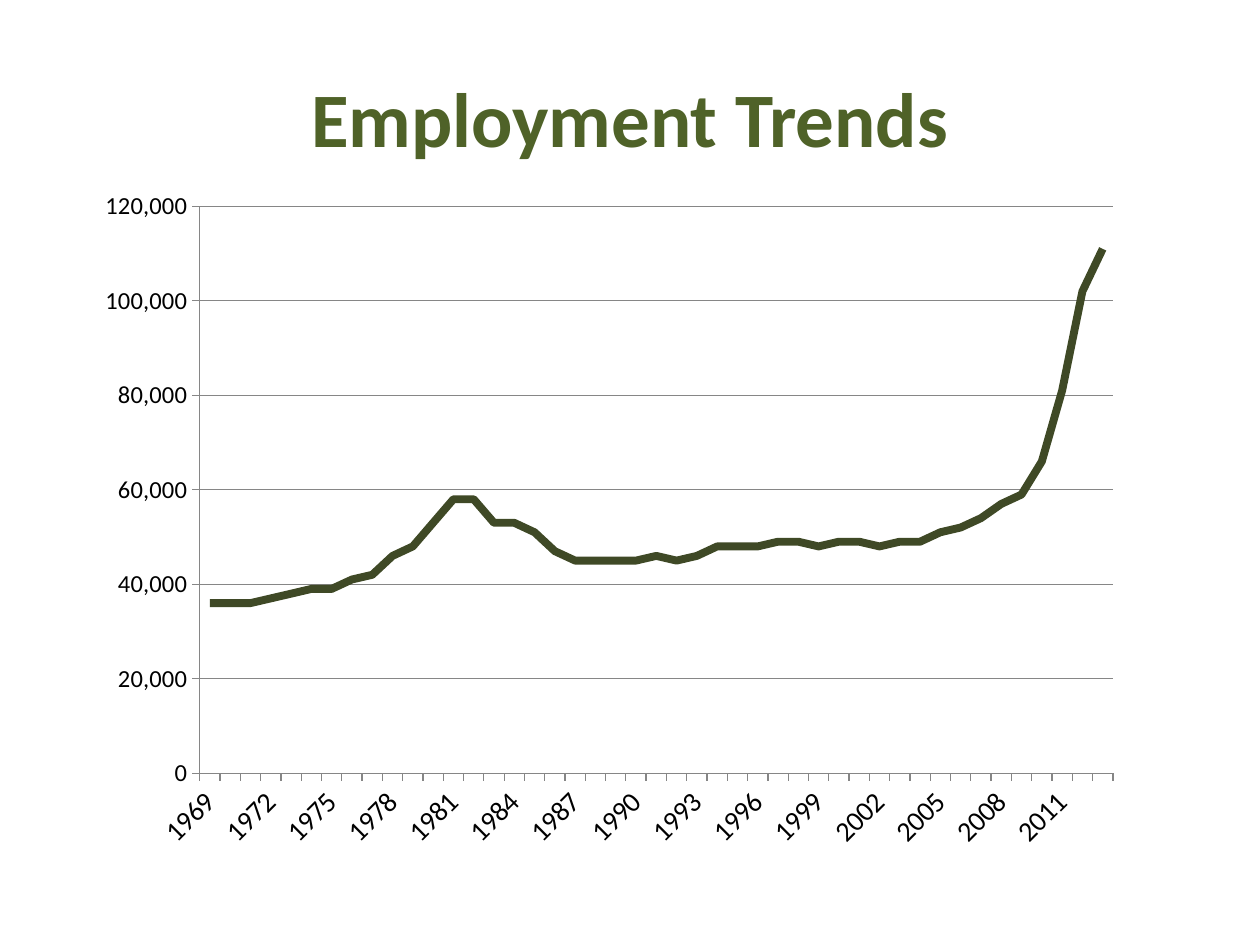
from dataclasses import dataclass

from pptx import Presentation
from pptx.chart.data import CategoryChartData
from pptx.dml.color import RGBColor
from pptx.enum.chart import XL_CHART_TYPE, XL_TICK_MARK
from pptx.enum.text import MSO_ANCHOR, PP_ALIGN
from pptx.oxml import parse_xml
from pptx.oxml.ns import nsdecls
from pptx.util import Cm, Pt

LINE = XL_CHART_TYPE.LINE
OUTSIDE = XL_TICK_MARK.OUTSIDE
MIDDLE = MSO_ANCHOR.MIDDLE
CENTER = PP_ALIGN.CENTER
TITLE_ONLY = 5


@dataclass(frozen=True)
class Theme:
    font: str = "Calibri"
    title: RGBColor = RGBColor(0x4F, 0x62, 0x28)
    series: RGBColor = RGBColor(0x3F, 0x49, 0x26)
    text: RGBColor = RGBColor(0, 0, 0)
    rule: RGBColor = RGBColor(0x86, 0x86, 0x86)
    title_size: int = 44
    year_size: int = 16
    value_size: int = 14
    series_width: float = 4.5


THEME = Theme()
FIRST_YEAR = 1969
YEAR_STEP = 3
# Jobs in thousands, one value a year
EMPLOYMENT = [
    36, 36, 36, 37, 38, 39, 39, 41, 42, 46, 48, 53, 58, 58, 53,
    53, 51, 47, 45, 45, 45, 45, 46, 45, 46, 48, 48, 48, 49, 49,
    48, 49, 49, 48, 49, 49, 51, 52, 54, 57, 59, 66, 81, 102, 111,
]
# Plot area as fractions of the chart frame
PLOT_AREA = {"x": 0.11, "y": 0.04, "w": 0.87, "h": 0.83}


def style_font(font, size, color, bold=False):
    font.name = THEME.font
    font.size = Pt(size)
    font.bold = bold
    font.color.rgb = color


def add_title(page, text):
    box = page.shapes.title
    box.left, box.top, box.width, box.height = Cm(1.27), Cm(0.76), Cm(22.86), Cm(3.18)
    box.text_frame.vertical_anchor = MIDDLE
    para = box.text_frame.paragraphs[0]
    para.alignment = CENTER
    span = para.add_run()
    span.text = text
    style_font(span.font, THEME.title_size, THEME.title, bold=True)


def style_axis(axis, size):
    axis.major_tick_mark = OUTSIDE
    axis.format.line.color.rgb = THEME.rule
    axis.format.line.width = Pt(0.75)
    style_font(axis.tick_labels.font, size, THEME.text)


def place_plot_area(chart):
    plot_area = chart.element.xpath("c:chart/c:plotArea")[0]
    for layout in plot_area.xpath("c:layout"):
        plot_area.remove(layout)
    modes = '<c:xMode val="edge"/><c:yMode val="edge"/>'
    sizes = "".join(f'<c:{key} val="{value}"/>' for key, value in PLOT_AREA.items())
    plot_area.insert(0, parse_xml(
        f'<c:layout {nsdecls("c")}><c:manualLayout><c:layoutTarget val="inner"/>'
        f"{modes}{sizes}</c:manualLayout></c:layout>"
    ))


def slant_years(chart):
    """Turn the year labels by 45 degrees and show every third one."""
    year_axis = chart.element.xpath("c:chart/c:plotArea/c:catAx")[0]
    body = year_axis.xpath("c:txPr/a:bodyPr")[0]
    body.set("rot", "-2700000")
    body.set("vert", "horz")
    year_axis.xpath("c:lblOffset")[0].addnext(
        parse_xml(f'<c:tickLblSkip {nsdecls("c")} val="{YEAR_STEP}"/>')
    )


def add_trend_chart(page):
    data = CategoryChartData(number_format="#,##0")
    data.categories = [str(FIRST_YEAR + index) for index in range(len(EMPLOYMENT))]
    data.add_series("Series 1", [value * 1000 for value in EMPLOYMENT])
    chart = page.shapes.add_chart(
        LINE, Cm(1.7), Cm(3.61), Cm(21.16), Cm(13.77), data
    ).chart
    chart.has_legend = False
    chart.has_title = False
    style_font(chart.font, 10, THEME.text)

    # Series
    plot = chart.plots[0]
    plot.vary_by_categories = False
    series = plot.series[0]
    series.smooth = False
    series.format.line.color.rgb = THEME.series
    series.format.line.width = Pt(THEME.series_width)

    # Axes
    style_axis(chart.category_axis, THEME.year_size)
    values = chart.value_axis
    style_axis(values, THEME.value_size)
    values.minimum_scale, values.maximum_scale, values.major_unit = 0, 120000, 20000
    values.tick_labels.number_format = r"#,##0;\-#,##0"
    values.tick_labels.number_format_is_linked = False
    values.has_major_gridlines = True
    values.major_gridlines.format.line.color.rgb = THEME.rule
    values.major_gridlines.format.line.width = Pt(0.75)
    slant_years(chart)
    place_plot_area(chart)


def main():
    deck = Presentation()
    deck.slide_width, deck.slide_height = Cm(25.4), Cm(19.05)
    page = deck.slides.add_slide(deck.slide_layouts[TITLE_ONLY])
    add_title(page, "Employment Trends")
    add_trend_chart(page)
    deck.save("out.pptx")


if __name__ == "__main__":
    main()
